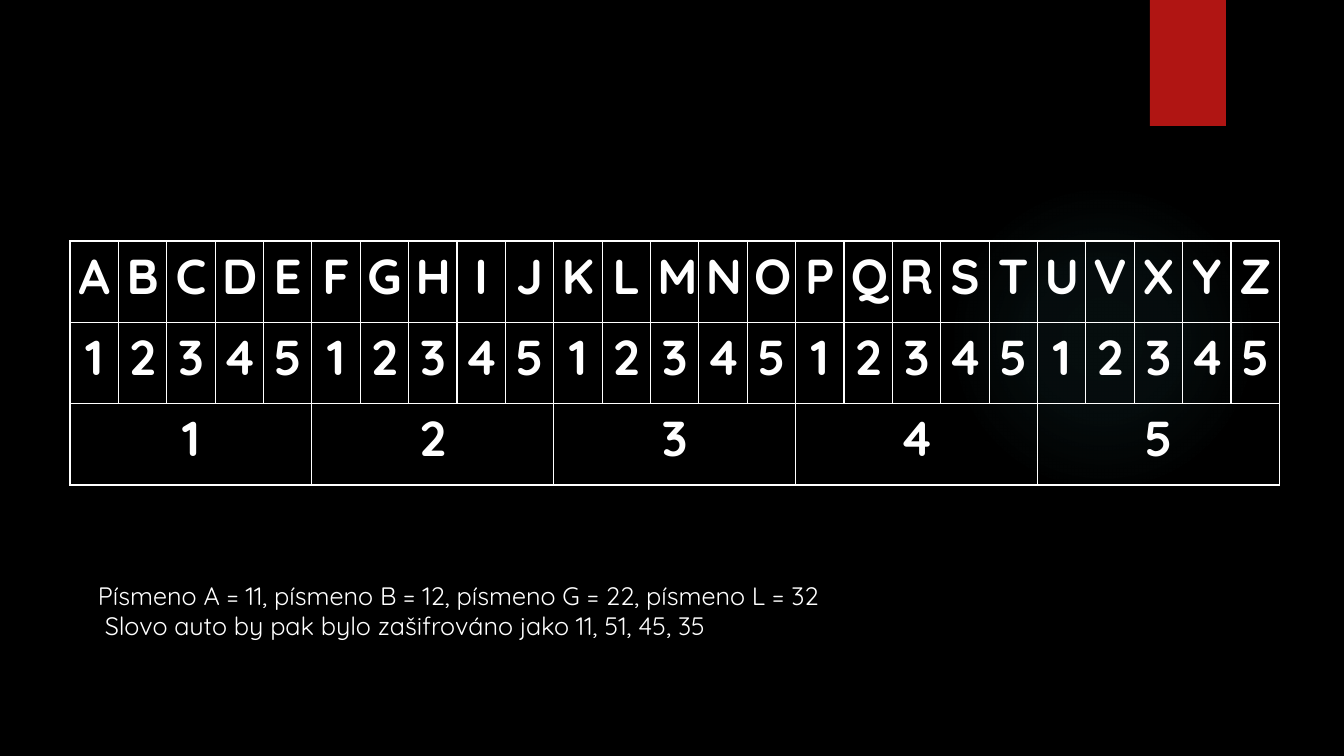
from lxml.etree import SubElement
from pptx import Presentation
from pptx.dml.color import RGBColor
from pptx.enum.shapes import MSO_SHAPE
from pptx.enum.text import MSO_AUTO_SIZE, PP_ALIGN
from pptx.oxml import parse_xml
from pptx.oxml.ns import nsdecls, qn
from pptx.util import Emu, Pt

LETTERS = "ABCDEFGHIJKLMNOPQRSTUVXYZ"
GROUP = 5
NOTES = [
    "Písmeno A = 11, písmeno B = 12, písmeno G = 22, písmeno L = 32",
    " Slovo auto by pak bylo zašifrováno jako 11, 51, 45, 35",
]
GLOW_STOPS = [(0, 7), (36, 6), (69, 0)]

SLIDE = (1344, 756)
GLOW_BOX = (948, 184, 310, 310)
RIBBON_BOX = (1150, 0, 76, 126)
TABLE_BOX = (70, 241, 1210, 244)
NOTES_BOX = (88, 575, 807, 72)

FONT = "Quicksand"
BLACK = RGBColor(0x00, 0x00, 0x00)
WHITE = RGBColor(0xFF, 0xFF, 0xFF)
RED = RGBColor(0xB0, 0x15, 0x13)
TEAL = RGBColor(0x50, 0xB9, 0xC1)


def px(n):
    return Emu(round(n * 914400 / 100.8))


def add_block(s, shape_type, box):
    sp = s.shapes.add_shape(shape_type, *map(px, box))
    sp.shadow.inherit = False
    sp.line.fill.background()
    return sp


def fill_glow(sp):
    stops = "".join(
        f'<a:gs pos="{pos * 1000}"><a:srgbClr val="{TEAL}">'
        f'<a:alpha val="{alpha * 1000}"/></a:srgbClr></a:gs>'
        for pos, alpha in GLOW_STOPS)
    grad = parse_xml(
        f'<a:gradFill {nsdecls("a")}><a:gsLst>{stops}</a:gsLst><a:path path="circle">'
        '<a:fillToRect l="50000" t="50000" r="50000" b="50000"/></a:path></a:gradFill>')
    sp._element.spPr.find(qn("a:prstGeom")).addnext(grad)


def add_text(p, text, size, bold=False):
    r = p.add_run()
    r.text = text
    r.font.name, r.font.size, r.font.bold = FONT, Pt(size), bold
    r.font.color.rgb = WHITE


def format_cell(cell):
    tc_pr = cell._tc.get_or_add_tcPr()
    for side in ("lnL", "lnR", "lnT", "lnB"):
        ln = SubElement(tc_pr, qn(f"a:{side}"), w=str(Pt(1)))
        fill = SubElement(ln, qn("a:solidFill"))
        SubElement(fill, qn("a:srgbClr"), val=str(WHITE))
    cell.fill.background()
    cell.margin_left = cell.margin_right = px(7)
    cell.margin_top = cell.margin_bottom = 0


def write_cell(cell, text):
    p = cell.text_frame.paragraphs[0]
    p.alignment, p.line_spacing = PP_ALIGN.CENTER, 1.07
    add_text(p, text, 35, True)


def add_cipher_table(s):
    cols = len(LETTERS)
    table = s.shapes.add_table(3, cols, *map(px, TABLE_BOX)).table
    table.first_row = table.horz_banding = False
    for col in table.columns:
        col.width = px(TABLE_BOX[2] / cols)
    for row in table.rows:
        row.height = px(TABLE_BOX[3] / 3)
    for cell in table.iter_cells():
        format_cell(cell)
    for i, letter in enumerate(LETTERS):
        write_cell(table.cell(0, i), letter)
        write_cell(table.cell(1, i), str(i % GROUP + 1))
    for i in range(0, cols, GROUP):
        table.cell(2, i).merge(table.cell(2, i + GROUP - 1))
        write_cell(table.cell(2, i), str(i // GROUP + 1))


def add_notes(s):
    tf = s.shapes.add_textbox(*map(px, NOTES_BOX)).text_frame
    tf.word_wrap = False
    tf.auto_size = MSO_AUTO_SIZE.SHAPE_TO_FIT_TEXT
    for i, line in enumerate(NOTES):
        p = tf.add_paragraph() if i else tf.paragraphs[0]
        add_text(p, line, 18)


def main():
    """Build the letter cipher slide."""
    prs = Presentation()
    prs.slide_width, prs.slide_height = map(px, SLIDE)
    s = prs.slides.add_slide(prs.slide_layouts[6])
    s.background.fill.solid()
    s.background.fill.fore_color.rgb = BLACK
    fill_glow(add_block(s, MSO_SHAPE.OVAL, GLOW_BOX))
    ribbon = add_block(s, MSO_SHAPE.RECTANGLE, RIBBON_BOX)
    ribbon.fill.solid()
    ribbon.fill.fore_color.rgb = RED
    add_cipher_table(s)
    add_notes(s)
    prs.save("out.pptx")


if __name__ == "__main__":
    main()
